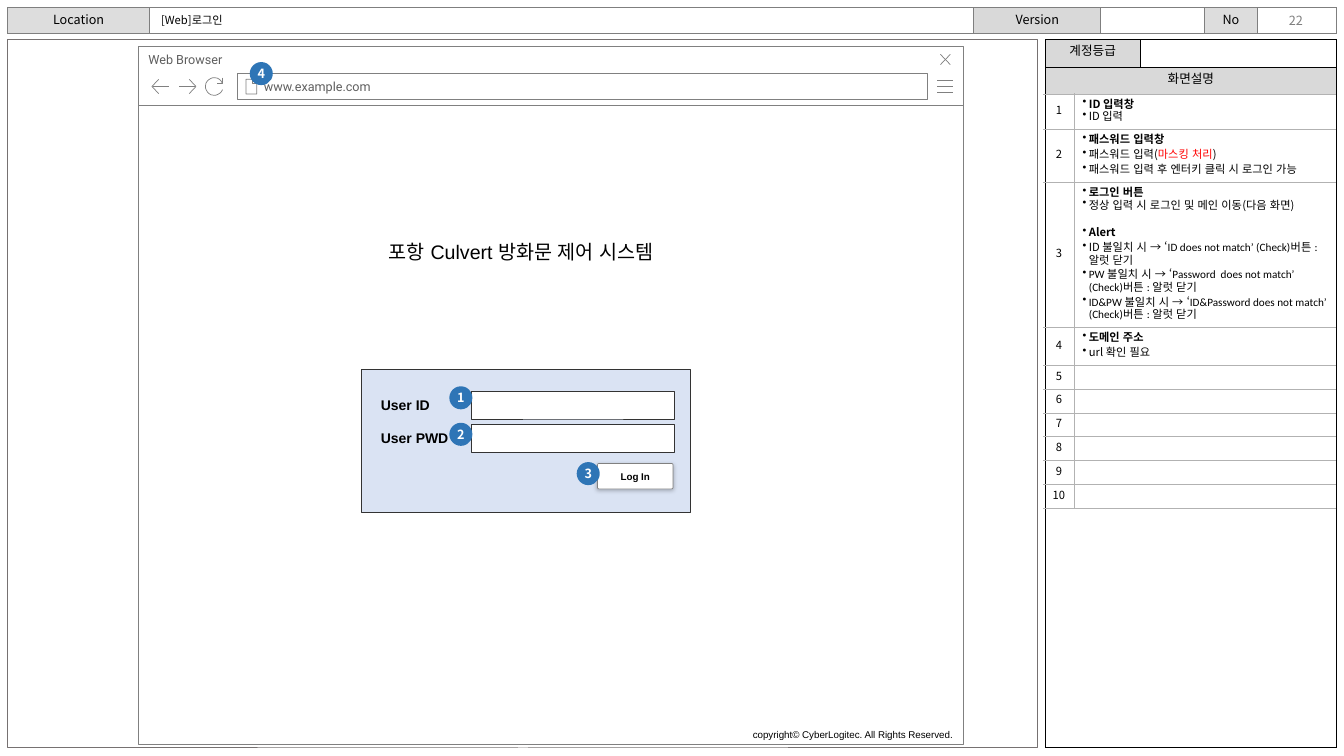
from dataclasses import dataclass
from math import cos, radians, sin

from lxml.etree import SubElement
from pptx import Presentation
from pptx.dml.color import RGBColor
from pptx.enum.lang import MSO_LANGUAGE_ID as Language
from pptx.enum.shapes import MSO_SHAPE as Shape
from pptx.enum.text import MSO_ANCHOR as Anchor, PP_ALIGN as Align
from pptx.oxml import parse_xml
from pptx.oxml.ns import nsdecls, qn
from pptx.util import Cm, Pt


@dataclass(frozen=True)
class Theme:
    black: str = "000000"
    white: str = "FFFFFF"
    red: str = "FF0000"
    label: str = "D9D9D9"
    label_light: str = "DDDDDD"
    grey: str = "808080"
    header_rule: str = "7F7F7F"
    frame: str = "767171"
    rule: str = "B2B2B2"
    browser_text: str = "5F5F5F"
    panel: str = "DAE3F3"
    field: str = "333333"
    badge: str = "2E75B6"
    korean: str = "Noto Sans CJK KR"
    sans: str = "Arial"
    web: str = "Roboto"
    latin: str = "Calibri"
    heading: int = 14
    form: int = 10
    body: int = 9
    note: int = 8
    small: int = 7


T = Theme()

# Content; header cells are (text, column width, fill)
PAGE_TITLE = "[Web]로그인"
PAGE_NUMBER = "22"
SYSTEM_NAME = "포항 Culvert 방화문 제어 시스템"
COPYRIGHT = "copyright© CyberLogitec. All Rights Reserved."
HEADER = [("Location", 3.56, T.label_light), ("", 20.78, T.white), ("Version", 3.2, T.label),
          ("", 2.62, T.white), ("No", 1.32, T.label_light), ("", 2, T.white)]
FORM_LABELS = ["User ID", "User PWD"]
BADGES = [("1", 11.36, 9.77), ("2", 11.36, 10.69), ("3", 14.57, 11.68), ("4", 6.33, 1.6)]

# Notes: row height, then paragraphs of (space before in points, bold, runs of (text, font, colour))
PLAIN = (T.korean, T.black)
MIXED = (T.latin, T.black)
STEP = 1.6
BLOCK = 10.6
NOTES = [
    (0.89, [(0, True, [("ID 입력창", *PLAIN)]), (0, False, [("ID 입력", *PLAIN)])]),
    (1.32, [(0, True, [("패스워드 입력창", *PLAIN)]),
            (STEP, False, [("패스워드 입력(", *PLAIN), ("마스킹 처리", T.korean, T.red), (")", *PLAIN)]),
            (STEP, False, [("패스워드 입력 후 엔터키 클릭 시 로그인 가능", *PLAIN)])]),
    (3.66, [(0, True, [("로그인 버튼", *PLAIN)]),
            (0, False, [("정상 입력 시 로그인 및 메인 이동(다음 화면)", *PLAIN)]),
            (BLOCK, True, [("Alert", *PLAIN)]),
            (STEP, False, [("ID 불일치 시 → ‘", *PLAIN),
                           ("ID does not match’ (Check)버튼 : 알럿 닫기", *MIXED)]),
            (STEP, False, [("PW 불일치 시 → ‘Password  does not match’ (Check)버튼 : 알럿 닫기", *MIXED)]),
            (STEP, False, [("ID&PW 불일치 시 → ", *MIXED), ("‘", *PLAIN),
                           ("ID&Password does not match’ (Check)버튼 : 알럿 닫기", *MIXED)])]),
    (0.94, [(0, True, [("도메인 주소", *PLAIN)]), (STEP, False, [("url 확인 필요", *PLAIN)])]),
] + [(0.6, [])] * 6

# Browser icons: each is a list of strokes, in centimetres
REFRESH_ARC = [(5.4 + 0.22 * cos(radians(a)), 2.18 + 0.22 * sin(radians(a))) for a in range(20, 336, 15)]
ICONS = [
    [[(23.62, y), (24.03, y)] for y in (2.03, 2.18, 2.34)],
    [[(23.95, 1.37), (23.7, 1.63)], [(23.7, 1.37), (23.95, 1.63)]],
    [[(6.36, 2), (6.36, 2.1), (6.47, 2.1)],
     [(6.37, 2), (6.2, 2), (6.2, 2.37), (6.47, 2.37), (6.47, 2.1), (6.37, 2)]],
    [[(4, 2.36), (3.83, 2.18), (4, 2)], [(3.85, 2.18), (4.27, 2.18)]],
    [[(4.77, 2), (4.94, 2.18), (4.77, 2.36)], [(4.92, 2.18), (4.5, 2.18)]],
    [[(5.61, 1.96), (5.61, 2.09), (5.46, 2.09)], REFRESH_ARC],
]

prs = Presentation()
prs.slide_width, prs.slide_height = Cm(33.87), Cm(19.05)
slide = prs.slides.add_slide(prs.slide_layouts[5])
shapes = slide.shapes


def rgb(color):
    return RGBColor.from_string(color)


def style(para, size, font, color, align=Align.LEFT, bold=False):
    para.alignment = align
    para.font.size, para.font.bold, para.font.name = Pt(size), bold, font
    para.font.color.rgb = rgb(color)
    defaults = para._p.pPr.find(qn("a:defRPr"))
    defaults.find(qn("a:latin")).addnext(parse_xml(f'<a:ea {nsdecls("a")} typeface="{T.korean}"/>'))
    for run in para.runs:
        run.font.language_id = Language.KOREAN


def write(shape, text, *look, anchor=Anchor.MIDDLE, insets=(0.25, 0.13, 0.25, 0.13), wrap=True, **kw):
    frame = shape.text_frame
    frame.word_wrap, frame.vertical_anchor = wrap, anchor
    frame.margin_left, frame.margin_top, frame.margin_right, frame.margin_bottom = map(Cm, insets)
    frame.text = text
    style(frame.paragraphs[0], *look, **kw)


def label(box, *args, **kw):
    write(shapes.add_textbox(*map(Cm, box)), *args, **kw)


def outline(shape, fill, color, width):
    shape.shadow.inherit = False
    if fill:
        shape.fill.solid()
        shape.fill.fore_color.rgb = rgb(fill)
    else:
        shape.fill.background()
    shape.line.color.rgb, shape.line.width = rgb(color), Pt(width)


def block(box, fill, color, width=0.5, kind=Shape.RECTANGLE):
    shape = shapes.add_shape(kind, *map(Cm, box))
    outline(shape, fill, color, width)
    return shape


def grid(left, top, widths, heights):
    table = shapes.add_table(len(heights), len(widths), Cm(left), Cm(top),
                             Cm(sum(widths)), Cm(sum(heights))).table
    table.first_row = table.horz_banding = False
    for column, width in zip(table.columns, widths):
        column.width = Cm(width)
    for row, height in zip(table.rows, heights):
        row.height = Cm(height)
    return table


def dress(cell, fill, color, width, hidden="", insets=(0, 0, 0, 0)):
    cell.vertical_anchor = Anchor.MIDDLE
    cell.margin_left, cell.margin_top, cell.margin_right, cell.margin_bottom = map(Cm, insets)
    para = cell.text_frame.paragraphs[0]
    para.line_spacing = Pt(9)
    SubElement(para._p, qn("a:endParaRPr")).set("sz", str(T.note * 100))
    if fill:
        cell.fill.solid()
        cell.fill.fore_color.rgb = rgb(fill)
    else:
        cell.fill.background()
    for place, side in enumerate("LRTB"):
        paint = "<a:noFill/>" if side in hidden else f'<a:solidFill><a:srgbClr val="{color}"/></a:solidFill>'
        cell._tc.get_or_add_tcPr().insert(place, parse_xml(
            f'<a:ln{side} {nsdecls("a")} w="{int(Pt(width))}">{paint}</a:ln{side}>'))


def caption(cell, text, size=T.body):
    para = cell.text_frame.paragraphs[0]
    para.text = text
    style(para, size, T.korean, T.black, Align.CENTER)


# Header strip, title and page number
header = grid(0.2, 0.2, [width for _, width, _ in HEADER], [0.64])
for cell, (text, _, fill) in zip(header.rows[0].cells, HEADER):
    dress(cell, fill, T.header_rule, 0.75, insets=(0.13, 0.08, 0.13, 0))
    if text:
        caption(cell, text)
title = shapes.title
shapes._spTree.append(title._element)  # bring the title in front of the strip
title.left, title.top, title.width, title.height = map(Cm, (3.81, 0.2, 15.21, 0.94))
write(title, PAGE_TITLE, T.note, T.korean, T.black, anchor=Anchor.TOP)
label((31.39, 0.1, 2.29, 0.81), PAGE_NUMBER, T.body, T.korean, T.header_rule,
      Align.CENTER, insets=(0.25, 0.13, 0, 0.13))

# Description column
side = grid(26.34, 0.99, [2.39, 4.95], [0.7, 0.69, 16.46])
for row in (1, 2):
    side.cell(row, 0).merge(side.cell(row, 1))
for row in range(3):
    for col in range(2):
        filled = row == 1 or (row, col) == (0, 0)
        dress(side.cell(row, col), T.label if filled else None, T.black, 0.25)
caption(side.cell(0, 0), "계정등급")
caption(side.cell(1, 0), "화면설명")
block((0.2, 0.99, 25.96, 17.86), None, T.frame, 0.75)

# Numbered notes
notes = grid(26.29, 2.36, [0.79, 6.6], [height for height, _ in NOTES])
for row, (_, paragraphs) in enumerate(NOTES):
    number, note = notes.cell(row, 0), notes.cell(row, 1)
    dress(number, None, T.rule, 0.25, "L", (0.1, 0, 0.1, 0))
    caption(number, str(row + 1), T.note)
    dress(note, None, T.rule, 0.25, "R", (0.2, 0.13, 0.2, 0.13) if paragraphs else (0, 0, 0, 0))
    for i, (gap, bold, runs) in enumerate(paragraphs):
        para = note.text_frame.add_paragraph() if i else note.text_frame.paragraphs[0]
        para.line_spacing, para.space_before = Pt(9), Pt(gap)
        props = para._p.get_or_add_pPr()
        props.set("marL", str(Cm(0.16)))
        props.set("indent", str(-Cm(0.16)))
        SubElement(props, qn("a:buChar")).set("char", "•")
        for text, font, color in runs:
            run = para.add_run()
            run.text = text
            if font != runs[0][1]:
                run.font.name = font
            if color != T.black:
                run.font.color.rgb = rgb(color)
        style(para, T.note, runs[0][1], T.black, bold=bold)

# Browser window
block((3.49, 2.66, 20.78, 16.1), T.white, T.grey)
write(block((3.49, 1.17, 20.78, 1.49), T.white, T.grey), "Web Browser",
      T.body, T.web, T.browser_text, anchor=Anchor.TOP)
write(block((5.99, 1.85, 17.37, 0.66), T.white, T.grey), "www.example.com",
      T.body, T.web, T.browser_text, insets=(0.66, 0.13, 0.25, 0.13))
for strokes in ICONS:
    (start, *rest), *others = [[(100 * x, 100 * y) for x, y in stroke] for stroke in strokes]
    pen = shapes.build_freeform(*start, scale=Cm(0.01))
    pen.add_line_segments(rest, close=False)
    for start, *rest in others:
        pen.move_to(*start)
        pen.add_line_segments(rest, close=False)
    outline(pen.convert_to_shape(), None, T.grey, 0.5)

# Login form
label((5.94, 5.92, 14.4, 0.86), SYSTEM_NAME, T.heading, T.sans, T.black, Align.CENTER)
block((9.1, 9.31, 8.31, 3.61), T.panel, T.field)
for i, text in enumerate(FORM_LABELS):
    top = 9.87 + 0.83 * i
    label((9.35, top, 2.54, 0.69), text, T.form, T.sans, T.black, bold=True, wrap=False)
    block((11.89, top, 5.11, 0.69), T.white, T.field)
login = block((15.06, 11.68, 1.9, 0.64), T.white, T.grey, kind=Shape.ROUNDED_RECTANGLE)
login.adjustments[0] = 0.05
write(login, "Log In", T.small, T.sans, T.black, Align.CENTER, bold=True, insets=(0.2, 0.13, 0.2, 0.13))
login._element.spPr.find(qn("a:effectLst")).append(parse_xml(
    f'<a:outerShdw {nsdecls("a")} blurRad="{int(Pt(3))}" dist="{int(Pt(1))}" dir="5400000">'
    f'<a:srgbClr val="{T.black}"><a:alpha val="25000"/></a:srgbClr></a:outerShdw>'))

# Callout badges and copyright
for number, left, top in BADGES:
    write(block((left, top, 0.51, 0.51), T.badge, T.badge, 2, Shape.OVAL), number,
          T.body, T.korean, T.white, Align.CENTER, bold=True, insets=(0, 0, 0, 0))
label((17.4, 18.24, 6.86, 0.56), COPYRIGHT, T.small, T.sans, T.black, Align.RIGHT)

prs.save("out.pptx")
